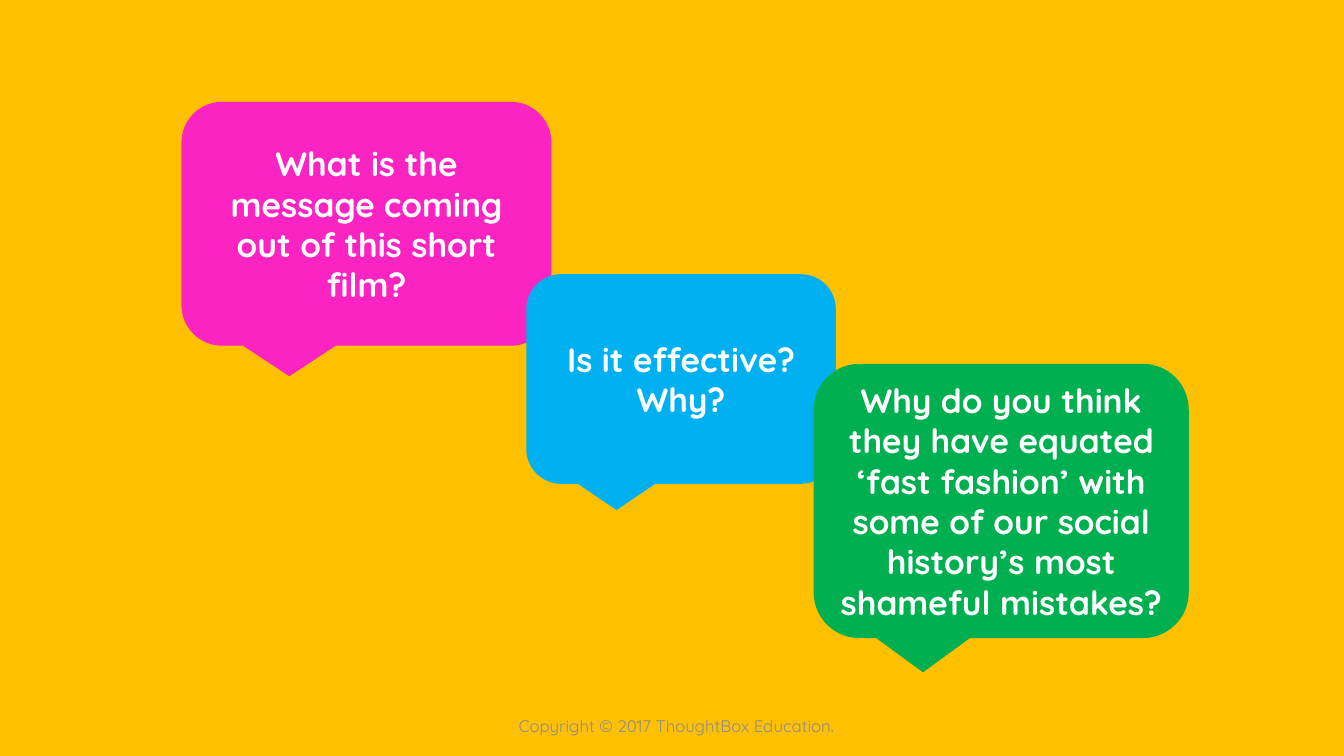
from pptx import Presentation
from pptx.dml.color import RGBColor
from pptx.enum.shapes import MSO_SHAPE
from pptx.enum.text import MSO_ANCHOR, PP_ALIGN
from pptx.util import Inches

from pptx.util import Pt

WIDTH, HEIGHT = 13.33, 7.5
FONT = "Quicksand"

# Question, fill colour, box (left, top, width, height in inches)
QUESTIONS = [
    ("What is the message coming out of this short film?",
     "FB23C2", (1.8, 1.01, 3.67, 2.42)),
    ("Is it effective? Why?",
     "00B0F0", (5.22, 2.72, 3.07, 2.08)),
    ("Why do you think they have equated ‘fast fashion’ with some of our "
     "social history’s most shameful mistakes?",
     "00B050", (8.07, 3.61, 3.72, 2.72)),
]


def paint(fill, color):
    fill.solid()
    fill.fore_color.rgb = RGBColor.from_string(color)


def write(sp, text, size, color, bold=False):
    tf = sp.text_frame
    tf.word_wrap = True
    tf.vertical_anchor = MSO_ANCHOR.MIDDLE
    tf.text = text
    p = tf.paragraphs[0]
    p.alignment = PP_ALIGN.CENTER
    font = p.runs[0].font
    font.name, font.size, font.bold = FONT, Pt(size), bold
    font.color.rgb = RGBColor.from_string(color)


def add_question(s, text, color, box):
    sp = s.shapes.add_shape(MSO_SHAPE.ROUNDED_RECTANGULAR_CALLOUT,
                            *map(Inches, box))
    sp.shadow.inherit = False
    paint(sp.fill, color)
    sp.line.fill.background()
    write(sp, text, 24, "FFFFFF", bold=True)


def add_footer(s, text, box):
    write(s.shapes.add_textbox(*map(Inches, box)), text, 12, "8C8C8C")


def main():
    prs = Presentation()
    prs.slide_width, prs.slide_height = Inches(WIDTH), Inches(HEIGHT)
    s = prs.slides.add_slide(prs.slide_layouts[6])
    paint(s.background.fill, "FFC000")

    # Copyright line
    add_footer(s, "Copyright © 2017 ThoughtBox Education.", (4.46, 7, 4.5, 0.4))

    # Speech bubbles, stepping down to the right
    for text, color, box in QUESTIONS:
        add_question(s, text, color, box)

    prs.save("out.pptx")


if __name__ == "__main__":
    main()
